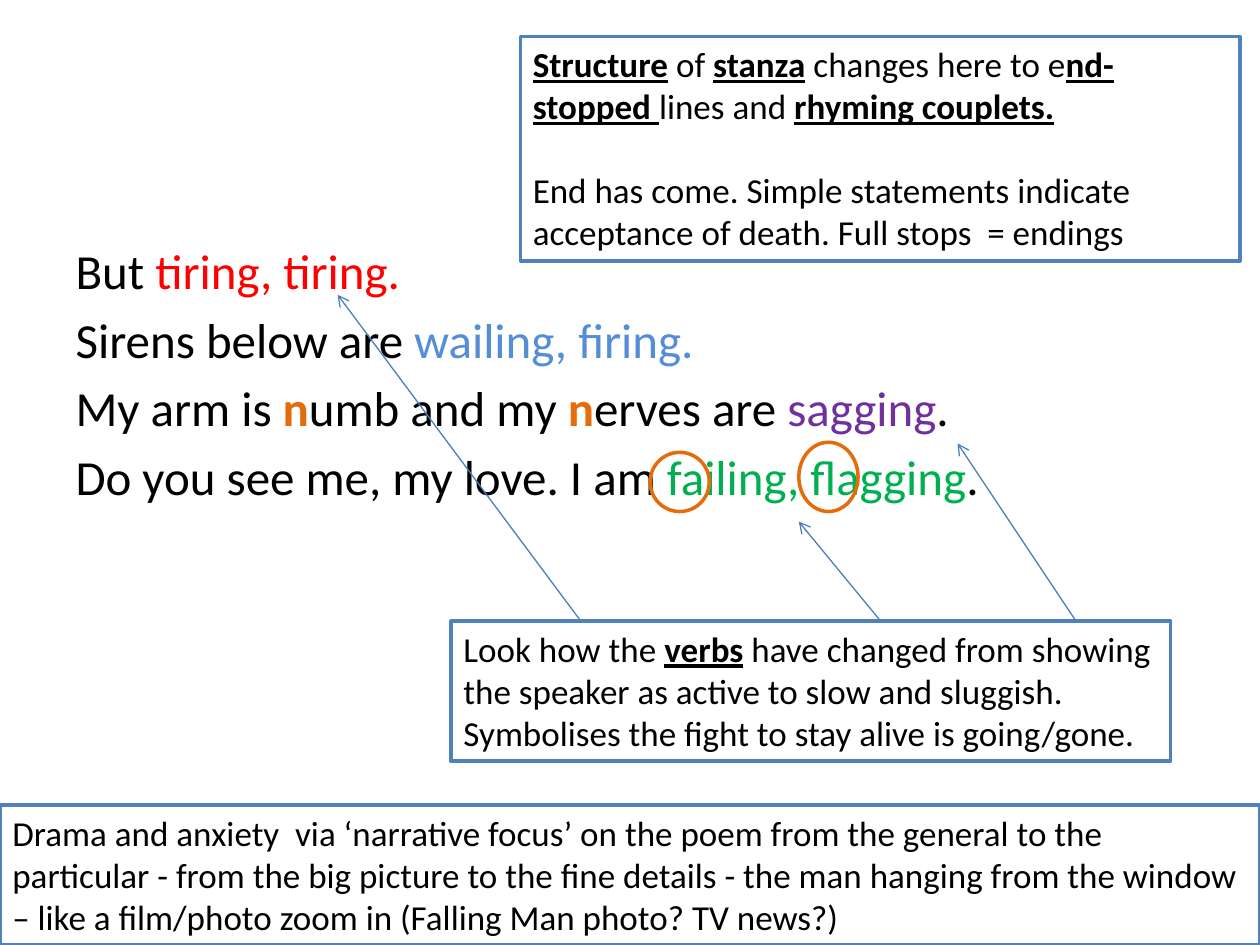
import dataclasses

import pptx
import pptx.dml.color
import pptx.enum.shapes
import pptx.enum.text
import pptx.oxml.ns
import pptx.util
from lxml import etree

COLUMNS, ROWS = 10, 7.5
CELL = pptx.util.Inches(1)


@dataclasses.dataclass(frozen=True)
class Theme:
    font: str = "Calibri"
    verse_size: float = 28
    note_size: float = 20
    text: str = "000000"
    paper: str = "FFFFFF"
    border: str = "4F81BD"
    arrow: str = "4B7EBC"
    red: str = "FF0000"
    blue: str = "558ED5"
    orange: str = "E46C0A"
    purple: str = "7030A0"
    green: str = "00B050"
    border_width: float = 2
    arrow_width: float = 0.75


THEME = Theme()

VERSES = [
    [("But ", None), ("tiring, tiring.", THEME.red)],
    [("Sirens below are ", None), ("wailing, firing.", THEME.blue)],
    [("My arm is ", None), ("n", THEME.orange), ("umb and my ", None),
     ("n", THEME.orange), ("erves are ", None), ("sagging", THEME.purple), (".", None)],
    [("Do you see me, my love. I am ", None), ("failing, flagging", THEME.green), (".", None)],
]

# In the notes, every second piece of a paragraph is a key term.
STRUCTURE_NOTE = [
    ["", "Structure", " of ", "stanza", " changes here to e", "nd-stopped ",
     "lines and ", "rhyming couplets."],
    ["End has come. Simple statements indicate acceptance of death. Full stops  = endings"],
]
FOCUS_NOTE = [
    ["Drama and anxiety  via ‘narrative focus’ on the poem from the general to the "
     "particular - from the big picture to the fine details - the man hanging from the "
     "window – like a film/photo zoom in (Falling Man photo? TV news?)"],
]
VERBS_NOTE = [
    ["Look how the ", "verbs", " have changed from showing the speaker as active to slow "
     "and sluggish. Symbolises the fight to stay alive is going/gone."],
]


def grid(*cells):
    """Turn columns and rows of the slide grid into lengths."""
    return [int(cell * CELL) for cell in cells]


def rgb(colour):
    return pptx.dml.color.RGBColor.from_string(colour)


def style_line(line, colour, width):
    line.color.rgb = rgb(colour)
    line.width = pptx.util.Pt(width)


def style_paragraph(paragraph, size):
    paragraph.font.name = THEME.font
    paragraph.font.size = pptx.util.Pt(size)
    paragraph.font.color.rgb = rgb(THEME.text)


def paragraphs_for(frame, items):
    """Pair each item with a paragraph, starting with the one already there."""
    for index, item in enumerate(items):
        yield item, frame.add_paragraph() if index else frame.paragraphs[0]


def add_run(paragraph, text):
    run = paragraph.add_run()
    run.text = text
    return run


def remove_bullet(paragraph, hanging):
    properties = paragraph._p.get_or_add_pPr()
    properties.set("marL", str(hanging))
    properties.set("indent", str(-hanging))
    etree.SubElement(properties, pptx.oxml.ns.qn("a:buNone"))


def fill_poem(placeholder, place):
    placeholder.left, placeholder.top, placeholder.width, placeholder.height = grid(*place)
    frame = placeholder.text_frame
    frame.auto_size = pptx.enum.text.MSO_AUTO_SIZE.NONE
    frame.margin_top = pptx.util.Inches(0.6)
    for verse, paragraph in paragraphs_for(frame, VERSES):
        style_paragraph(paragraph, THEME.verse_size)
        paragraph.space_before = pptx.util.Pt(0.2 * THEME.verse_size)
        remove_bullet(paragraph, pptx.util.Inches(0.38))
        for text, colour in verse:
            run = add_run(paragraph, text)
            if colour:
                run.font.color.rgb = rgb(colour)
            if colour == THEME.orange:
                run.font.bold = True


def add_note(slide, note, place):
    box = slide.shapes.add_textbox(*grid(*place))
    box.fill.solid()
    box.fill.fore_color.rgb = rgb(THEME.paper)
    style_line(box.line, THEME.border, THEME.border_width)
    frame = box.text_frame
    frame.word_wrap = True
    frame.auto_size = pptx.enum.text.MSO_AUTO_SIZE.SHAPE_TO_FIT_TEXT
    for pieces, paragraph in paragraphs_for(frame, note):
        style_paragraph(paragraph, THEME.note_size)
        if pieces is not note[0]:
            paragraph.space_before = pptx.util.Pt(1.2 * THEME.note_size)
        for index, text in enumerate(pieces):
            if text:
                run = add_run(paragraph, text)
                if index % 2:
                    run.font.bold = run.font.underline = True


def add_ring(slide, place):
    ring = slide.shapes.add_shape(pptx.enum.shapes.MSO_SHAPE.OVAL, *grid(*place))
    ring.shadow.inherit = False
    ring.fill.background()
    style_line(ring.line, THEME.orange, THEME.border_width)


def add_arrow(slide, start, end):
    arrow = slide.shapes.add_connector(
        pptx.enum.shapes.MSO_CONNECTOR.STRAIGHT, *grid(*start, *end))
    style_line(arrow.line, THEME.arrow, THEME.arrow_width)
    etree.SubElement(arrow.line._get_or_add_ln(), pptx.oxml.ns.qn("a:tailEnd"), type="arrow")
    etree.SubElement(arrow._element.spPr, pptx.oxml.ns.qn("a:effectLst"))


def main():
    presentation = pptx.Presentation()
    presentation.slide_width, presentation.slide_height = grid(COLUMNS, ROWS)
    slide = presentation.slides.add_slide(presentation.slide_layouts[1])
    title = slide.shapes.title._element
    title.getparent().remove(title)

    fill_poem(slide.placeholders[1], (0.5, 1.31, 9.5, 2.99))
    note_width, verbs_top = 5.71, 4.93
    add_note(slide, STRUCTURE_NOTE, (4.13, 0.29, note_width, 1.78))
    add_note(slide, FOCUS_NOTE, (0, 6.39, COLUMNS, 1.11))
    for place in [(5.16, 3.59, 0.47, 0.47), (6.34, 3.51, 0.47, 0.55)]:
        add_ring(slide, place)
    add_note(slide, VERBS_NOTE, (3.58, verbs_top, note_width, 1.11))
    for start_column, end in [(6.99, (6.34, 4.14)), (8.54, (7.6, 3.52)), (4.61, (2.68, 2.34))]:
        add_arrow(slide, (start_column, verbs_top), end)

    presentation.save("out.pptx")


if __name__ == "__main__":
    main()
